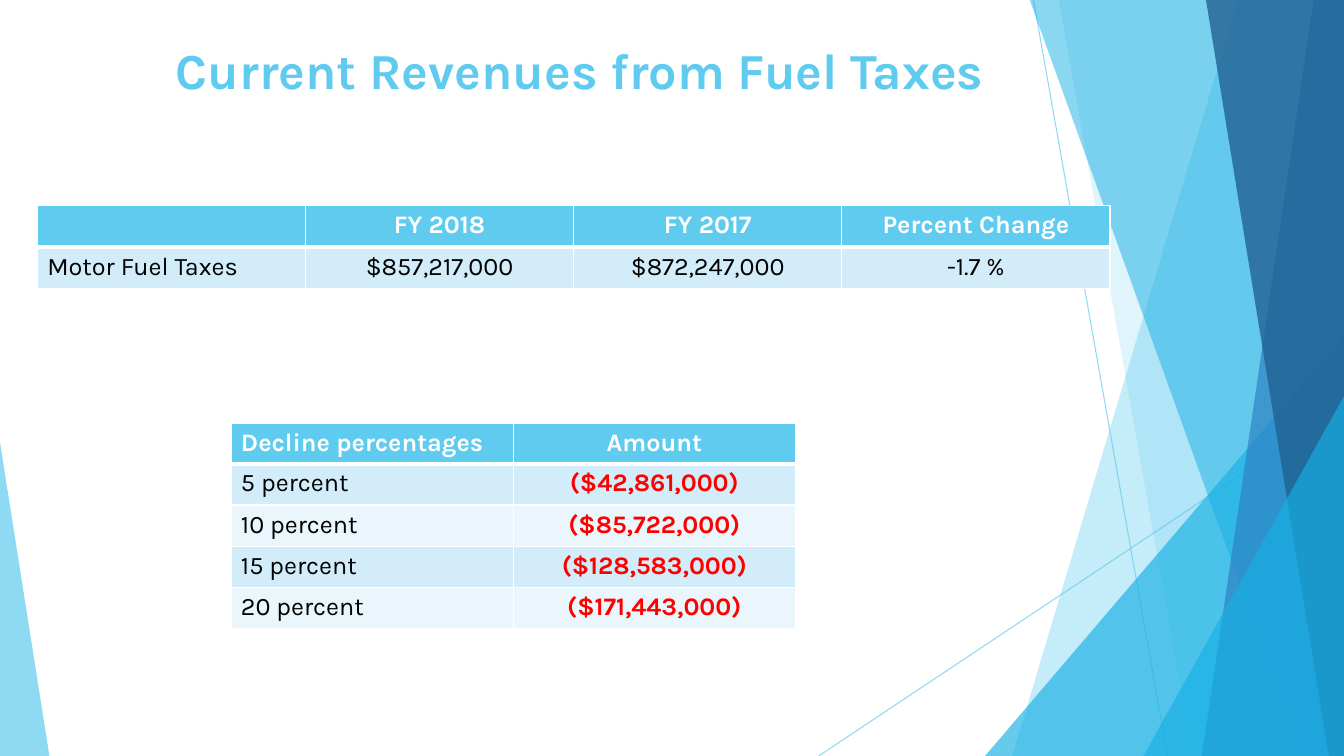
from dataclasses import dataclass

from lxml import etree
from pptx import Presentation
from pptx.dml.color import RGBColor
from pptx.enum.shapes import MSO_CONNECTOR, MSO_SHAPE
from pptx.enum.text import MSO_ANCHOR, PP_ALIGN
from pptx.oxml.ns import qn
from pptx.util import Inches, Pt

STRAIGHT = MSO_CONNECTOR.STRAIGHT
TRIANGLE = MSO_SHAPE.ISOSCELES_TRIANGLE
LEFT, CENTER = PP_ALIGN.LEFT, PP_ALIGN.CENTER
TOP = MSO_ANCHOR.TOP

WIDTH, HEIGHT = 13.33, 7.5
BAND_TOP = -0.01


@dataclass(frozen=True)
class Theme:
    font: str = "Karla"
    title_size: int = 36
    table_size: int = 18
    sky: str = "5FCBEF"
    cyan: str = "17B0E4"
    blue: str = "2E83C3"
    navy: str = "226292"
    dark_row: str = "D2ECF9"
    light_row: str = "EAF6FC"
    white: str = "FFFFFF"
    black: str = "000000"
    red: str = "FF0000"


THEME = Theme()


def rgb(color):
    return RGBColor.from_string(color)


def set_opacity(shape, percent):
    for color in shape._element.iter(qn("a:srgbClr")):
        etree.SubElement(color, qn("a:alpha"), val=str(percent * 1000))


def paint(shape, color, opacity):
    shape.shadow.inherit = False
    shape.fill.solid()
    shape.fill.fore_color.rgb = rgb(color)
    shape.line.fill.background()
    set_opacity(shape, opacity)


def add_ray(slide, start, end):
    ray = slide.shapes.add_connector(STRAIGHT, *map(Inches, start + end))
    ray.line.color.rgb = rgb(THEME.sky)
    ray.line.width = Pt(0.75)
    set_opacity(ray, 70)
    etree.SubElement(ray._element.spPr, qn("a:effectLst"))


def add_band(slide, top_x, bottom_x, color, opacity):
    corners = [(WIDTH, BAND_TOP), (WIDTH, HEIGHT), (bottom_x, HEIGHT)]
    outline = slide.shapes.build_freeform(Inches(top_x), Inches(BAND_TOP))
    outline.add_line_segments([(Inches(x), Inches(y)) for x, y in corners])
    paint(outline.convert_to_shape(), color, opacity)


def add_corner(slide, left, top, width, apex, color, opacity):
    corner = slide.shapes.add_shape(
        TRIANGLE, Inches(left), Inches(top), Inches(width), Inches(HEIGHT - top))
    corner.adjustments[0] = apex
    paint(corner, color, opacity)


def style_paragraph(paragraph, size, color, bold, align):
    paragraph.alignment = align
    paragraph.font.name = THEME.font
    paragraph.font.size = Pt(size)
    paragraph.font.bold = bold
    paragraph.font.color.rgb = rgb(color)


def add_title(slide, text):
    title = slide.shapes.add_textbox(
        Inches(0.27), Inches(0.34), Inches(10.96), Inches(1.12))
    frame = title.text_frame
    frame.word_wrap = True
    frame.vertical_anchor = TOP
    frame.text = text
    style_paragraph(frame.paragraphs[0], THEME.title_size, THEME.sky, True, CENTER)


def add_borders(cell, bottom_width):
    properties = cell._tc.get_or_add_tcPr()
    for side, width in (("L", 1), ("R", 1), ("T", 1), ("B", bottom_width)):
        border = etree.SubElement(properties, qn(f"a:ln{side}"), w=str(Pt(width)))
        fill = etree.SubElement(border, qn("a:solidFill"))
        etree.SubElement(fill, qn("a:srgbClr"), val=THEME.white)


def style_cell(cell, text, fill, color, bold, align, bottom_width):
    add_borders(cell, bottom_width)
    cell.fill.solid()
    cell.fill.fore_color.rgb = rgb(fill)
    cell.text = text
    style_paragraph(
        cell.text_frame.paragraphs[0], THEME.table_size, color, bold, align)


def add_revenue_table(slide, left, top, column_width, header_height, rows,
                      amount_color, amount_bold):
    row_height = 0.41
    columns = len(rows[0])
    height = header_height + row_height * (len(rows) - 1)
    table = slide.shapes.add_table(
        len(rows), columns, Inches(left), Inches(top),
        Inches(column_width * columns), Inches(height)).table
    table.horz_banding = False
    for column in table.columns:
        column.width = Inches(column_width)
    for r, texts in enumerate(rows):
        table.rows[r].height = Inches(row_height if r else header_height)
        for c, text in enumerate(texts):
            align = CENTER if c else LEFT
            if r == 0:
                look = (THEME.sky, THEME.white, True, align, 3)
            else:
                fill = THEME.dark_row if r % 2 else THEME.light_row
                color = amount_color if c else THEME.black
                look = (fill, color, bool(c) and amount_bold, align, 1)
            style_cell(table.cell(r, c), text, *look)


def add_backdrop(slide):
    add_ray(slide, (10.25, 0), (11.58, HEIGHT))
    add_ray(slide, (WIDTH, 4.03), (8.12, HEIGHT))
    add_band(slide, 12.28, 10.04, THEME.sky, 36)
    add_band(slide, 10.5, 11.83, THEME.sky, 20)
    add_corner(slide, 9.77, 3.33, 3.56, 1, THEME.cyan, 66)
    add_band(slide, 10.21, 12.91, THEME.cyan, 50)
    add_band(slide, 13.03, 11.92, THEME.blue, 70)
    add_band(slide, 11.96, 13.18, THEME.navy, 80)
    add_corner(slide, 11.34, 3.93, 1.99, 1, THEME.cyan, 66)
    add_corner(slide, 0, 4.39, 0.49, 0, THEME.sky, 70)


def main():
    deck = Presentation()
    deck.slide_width, deck.slide_height = Inches(WIDTH), Inches(HEIGHT)
    slide = deck.slides.add_slide(deck.slide_layouts[6])
    add_backdrop(slide)
    add_title(slide, "Current Revenues from Fuel Taxes")
    add_revenue_table(slide, 0.37, 2.04, 2.66, 0.41, [
        ("", "FY 2018", "FY 2017", "Percent Change"),
        ("Motor Fuel Taxes", "$857,217,000", "$872,247,000", "-1.7 %"),
    ], THEME.black, False)
    add_revenue_table(slide, 2.29, 4.2, 2.8, 0.39, [
        ("Decline percentages", "Amount"),
        ("5 percent", "($42,861,000)"),
        ("10 percent", "($85,722,000)"),
        ("15 percent", "($128,583,000)"),
        ("20 percent", "($171,443,000)"),
    ], THEME.red, True)
    deck.save("out.pptx")


if __name__ == "__main__":
    main()
